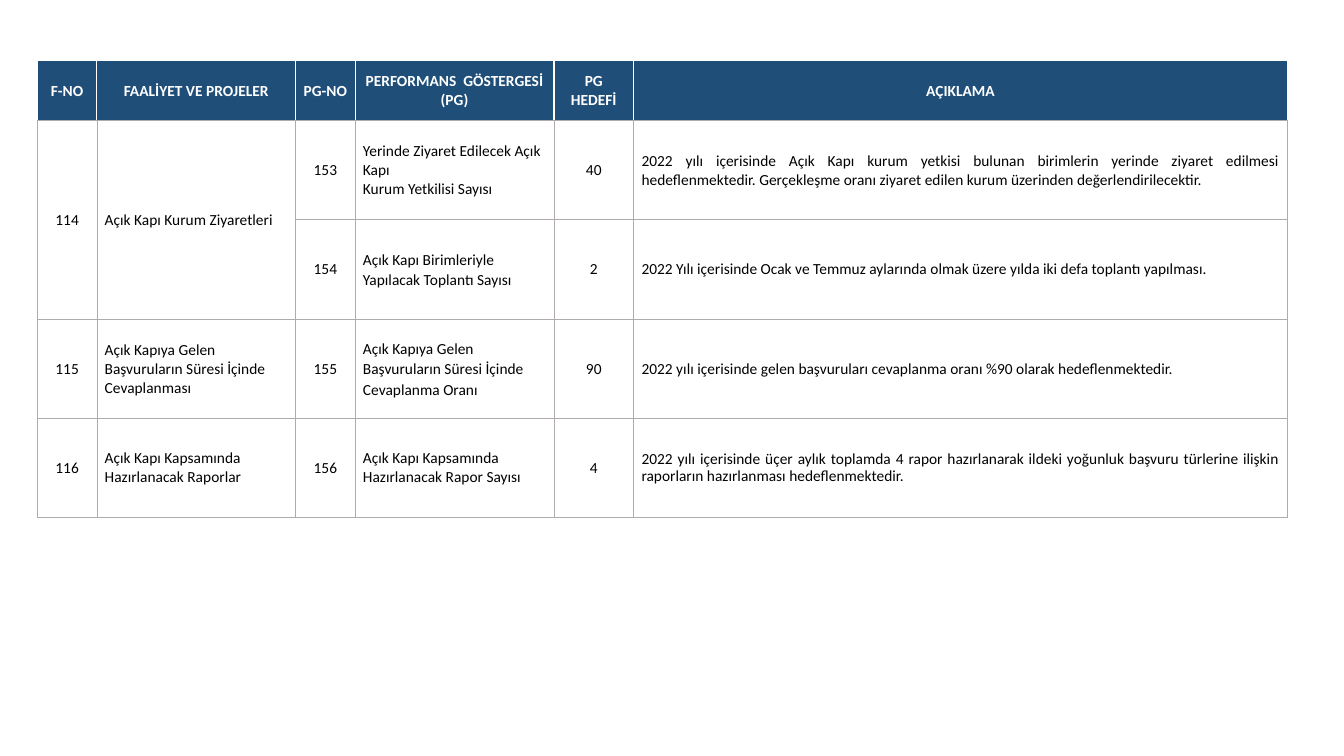
from copy import deepcopy
from dataclasses import dataclass

from lxml.etree import SubElement
from pptx import Presentation
from pptx.dml.color import RGBColor
from pptx.enum.text import MSO_VERTICAL_ANCHOR as Anchor, PP_PARAGRAPH_ALIGNMENT as Align
from pptx.oxml.ns import qn
from pptx.util import Pt


@dataclass(frozen=True)
class Theme:
    """Colours, font and sizes in points."""
    font: str = "Calibri"
    size: float = 11
    header_fill: str = "1F4E79"
    header_text: str = "FFFFFF"
    body_text: str = "000000"
    grid: str = "AFABAB"
    header_line: float = 1
    thick_line: float = 0.5
    thin_line: float = 0.25


THEME = Theme()
COLUMN_WIDTHS = (42.5, 142, 42.5, 142, 57, 467)
HEADER_HEIGHT, BODY_HEIGHT = 42.6, 70.9
ALIGNMENTS = (Align.CENTER, Align.LEFT, Align.CENTER, Align.LEFT, Align.CENTER, Align.JUSTIFY)
HEADERS = ("F-NO", "FAALİYET VE PROJELER", "PG-NO", "PERFORMANS  GÖSTERGESİ (PG)",
           "PG\vHEDEFİ", "AÇIKLAMA")
ROWS = (
    ("114", "Açık Kapı Kurum Ziyaretleri", "153",
     "Yerinde Ziyaret Edilecek Açık Kapı\nKurum Yetkilisi Sayısı", "40",
     "2022 yılı içerisinde Açık Kapı kurum yetkisi bulunan birimlerin yerinde ziyaret edilmesi "
     "hedeflenmektedir. Gerçekleşme oranı ziyaret edilen kurum üzerinden değerlendirilecektir."),
    ("", "", "154", "Açık Kapı Birimleriyle Yapılacak Toplantı Sayısı", "2",
     "2022 Yılı içerisinde Ocak ve Temmuz aylarında olmak üzere yılda iki defa toplantı yapılması."),
    ("115", "Açık Kapıya Gelen Başvuruların Süresi İçinde Cevaplanması", "155",
     "Açık Kapıya Gelen Başvuruların Süresi İçinde Cevaplanma Oranı", "90",
     "2022 yılı içerisinde gelen başvuruları cevaplanma oranı %90 olarak hedeflenmektedir."),
    ("116", "Açık Kapı Kapsamında Hazırlanacak Raporlar", "156",
     "Açık Kapı Kapsamında Hazırlanacak Rapor Sayısı", "4",
     "2022 yılı içerisinde üçer aylık toplamda 4 rapor hazırlanarak ildeki yoğunluk başvuru "
     "türlerine ilişkin raporların hazırlanması hedeflenmektedir."),
)
LINE_SPACING = {(2, 3): 1.07, (3, 3): 1.07, (4, 5): 0.9}


def apply_format(target, values):
    """Set each named attribute on the target."""
    for name, value in values.items():
        setattr(target, name, value)


def write_text(cell, text, color, bold, alignment, spacing):
    """Fill the cell with formatted text."""
    cell.text_frame.text = text
    for paragraph in cell.text_frame.paragraphs:
        apply_format(paragraph, {"alignment": alignment, "line_spacing": spacing})
        for run in paragraph.runs:
            apply_format(run.font, {"name": THEME.font, "size": Pt(THEME.size), "bold": bold})
            run.font.color.rgb = RGBColor.from_string(color)
        for line_break in paragraph._p.findall(qn("a:br")):
            line_break.append(deepcopy(paragraph.runs[0].font._element))


def draw_borders(cell, borders):
    """Draw left, right, top and bottom borders from (colour, width) pairs."""
    properties = cell._tc.get_or_add_tcPr()
    for index, (side, (color, width)) in enumerate(zip("LRTB", borders)):
        line = SubElement(properties, qn(f"a:ln{side}"), w=str(Pt(width)))
        fill = SubElement(line, qn("a:solidFill"))
        SubElement(fill, qn("a:srgbClr"), val=color)
        properties.insert(index, line)


def format_header(cell, text):
    """Format one heading cell."""
    write_text(cell, text, THEME.header_text, True, Align.CENTER, None)
    cell.fill.solid()
    cell.fill.fore_color.rgb = RGBColor.from_string(THEME.header_fill)
    white = (THEME.header_text, THEME.header_line)
    draw_borders(cell, (white, white, white, (THEME.grid, THEME.thin_line)))


def format_body(cell, text, column, spacing):
    """Format one body cell."""
    write_text(cell, text, THEME.body_text, False, ALIGNMENTS[column], spacing)
    cell.fill.background()
    thin, thick = (THEME.grid, THEME.thin_line), (THEME.grid, THEME.thick_line)
    left = thin if column == 0 else thick
    right = thin if column == len(COLUMN_WIDTHS) - 1 else thick
    draw_borders(cell, (left, right, thin, thin))


def add_performance_table(slide, left, top, width, height):
    """Place the performance table in the given box."""
    table = slide.shapes.add_table(len(ROWS) + 1, len(HEADERS), left, top, width, height).table
    apply_format(table, {"first_row": False, "horz_banding": False})
    for column, column_width in zip(table.columns, COLUMN_WIDTHS):
        column.width = Pt(column_width)
    for index, row in enumerate(table.rows):
        row.height = Pt(BODY_HEIGHT if index else HEADER_HEIGHT)
    for row, texts in enumerate((HEADERS, *ROWS)):
        for column, text in enumerate(texts):
            cell = table.cell(row, column)
            side = Pt(0.6 if row == 0 or column == 0 else 5.6)
            apply_format(cell, {"margin_left": side, "margin_right": side,
                                "margin_top": Pt(0.6), "margin_bottom": 0,
                                "vertical_anchor": Anchor.MIDDLE})
            if row == 0:
                format_header(cell, text)
            else:
                format_body(cell, text, column, LINE_SPACING.get((row, column)))
    for column in range(2):
        table.cell(1, column).merge(table.cell(2, column))


def main():
    """Build and save the presentation."""
    presentation = Presentation()
    apply_format(presentation, {"slide_width": Pt(960), "slide_height": Pt(540)})
    slide = presentation.slides.add_slide(presentation.slide_layouts[6])
    table_height = HEADER_HEIGHT + BODY_HEIGHT * len(ROWS)
    add_performance_table(slide, Pt(26.7), Pt(43.4), Pt(sum(COLUMN_WIDTHS)), Pt(table_height))
    presentation.save("out.pptx")


if __name__ == "__main__":
    main()
